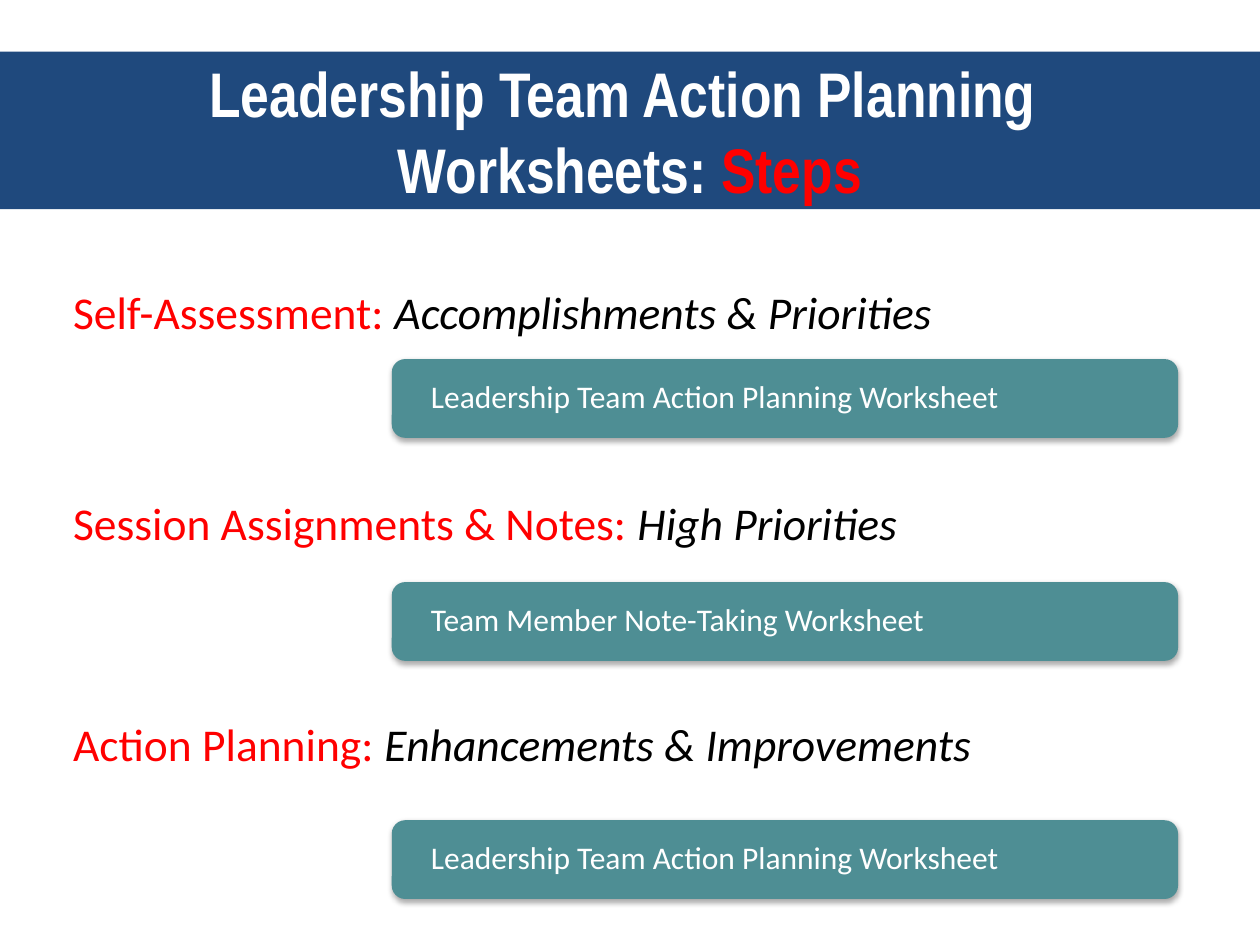
from lxml.etree import SubElement as Sub
from pptx import Presentation
from pptx.dml.color import RGBColor as Rgb
from pptx.enum.shapes import MSO_SHAPE as Kind
from pptx.enum.text import MSO_ANCHOR as Anchor, PP_ALIGN as Align
from pptx.oxml.ns import qn
from pptx.util import Inches, Pt

WIDE, HIGH = 10, 7.5
WHITE, BLACK, RED, NAVY, TEAL = "FFFFFF", "000000", "FF0000", "1F497D", "4E8E94"
HEAD = {"name": "Arial Narrow", "size": Pt(36), "bold": True}
STEP = {"name": "Calibri", "size": Pt(26)}
FORM = {"name": "Calibri", "size": Pt(18)}
STEPS = [
    (28, 14.8, 0.2, "Self-Assessment: ", "Accomplishments & Priorities",
     38, "Leadership Team Action Planning Worksheet"),
    (49.73, 16.27, 0.25, "Session Assignments & Notes: ", "High Priorities",
     61.6, "Team Member Note-Taking Worksheet"),
    (73.07, 18.4, 0.25, "Action Planning: ", "Enhancements & Improvements",
     86.8, "Leadership Team Action Planning Worksheet"),
]


def paint(color, tone):
    """Set a colour from a hex string."""
    color.rgb = Rgb.from_string(tone)


def apply(item, style):
    """Set each attribute named in a dict of format values."""
    for key, value in style.items():
        setattr(item, key, value)


def block(slide, kind, box, tone):
    """Add a plain filled shape, placed in percent of the slide."""
    left, top, width, height = box
    shape = slide.shapes.add_shape(
        kind, Inches(left * WIDE / 100), Inches(top * HIGH / 100),
        Inches(width * WIDE / 100), Inches(height * HIGH / 100))
    shape.shadow.inherit = False
    shape.fill.solid()
    paint(shape.fill.fore_color, tone)
    shape.line.fill.background()
    return shape


def frame(shape, anchor, align, pad=(0.1, 0.05, 0.1, 0.05), gap=1.0):
    """Set up the text frame and return its first paragraph."""
    sides = ("margin_left", "margin_top", "margin_right", "margin_bottom")
    text = shape.text_frame
    apply(text, {"word_wrap": True, "vertical_anchor": anchor})
    apply(text, dict(zip(sides, map(Inches, pad))))
    para = text.paragraphs[0]
    apply(para, {"alignment": align, "line_spacing": gap})
    return para


def write(para, words, style, tone):
    """Add one run of text in a style and colour."""
    run = para.add_run()
    run.text = words
    apply(run.font, style)
    paint(run.font.color, tone)


def shade(shape):
    """Give a shape a soft shadow straight below it."""
    effects = shape._element.spPr.find(qn("a:effectLst"))
    cast = Sub(effects, qn("a:outerShdw"), blurRad=str(Pt(3.1)),
               dist=str(Pt(1.8)), dir="5400000", rotWithShape="0")
    Sub(Sub(cast, qn("a:srgbClr"), val=BLACK), qn("a:alpha"), val="35000")


def title(slide):
    """Add the title band across the slide."""
    band = block(slide, Kind.RECTANGLE, (0, 5.47, 100, 16.67), NAVY)
    para = frame(band, Anchor.MIDDLE, Align.CENTER)
    write(para, "Leadership Team Action Planning ", HEAD, WHITE)
    para.add_line_break()
    write(para, "Worksheets: ", HEAD, WHITE)
    write(para, "Steps", HEAD, RED)


def panel(slide, top, height, inset, name, aim):
    """Add a translucent panel naming a step and its aim."""
    shape = block(slide, Kind.RECTANGLE, (2.8, top, 94.8, height), WHITE)
    tint = shape._element.spPr.find(qn("a:solidFill"))[0]
    Sub(tint, qn("a:alpha"), val="90000")
    para = frame(shape, Anchor.TOP, Align.LEFT, (0.3, inset, 0.3, 0.19), 0.9)
    write(para, name, STEP, RED)
    write(para, aim, STEP | {"italic": True}, BLACK)


def bar(slide, top, words):
    """Add a rounded bar naming a worksheet."""
    shape = block(slide, Kind.ROUNDED_RECTANGLE, (31.1, top, 62.4, 8.33), TEAL)
    shape.adjustments[0] = 0.17
    shade(shape)
    para = frame(shape, Anchor.MIDDLE, Align.LEFT, (0.28, 0.03, 0.28, 0.03), 0.9)
    write(para, words, FORM, WHITE)


def main():
    """Build the slide and save it."""
    deck = Presentation()
    apply(deck, {"slide_width": Inches(WIDE), "slide_height": Inches(HIGH)})
    slide = deck.slides.add_slide(deck.slide_layouts[6])
    title(slide)
    for top, height, inset, name, aim, low, form in STEPS:
        panel(slide, top, height, inset, name, aim)
        bar(slide, low, form)
    deck.save("out.pptx")


if __name__ == "__main__":
    main()
